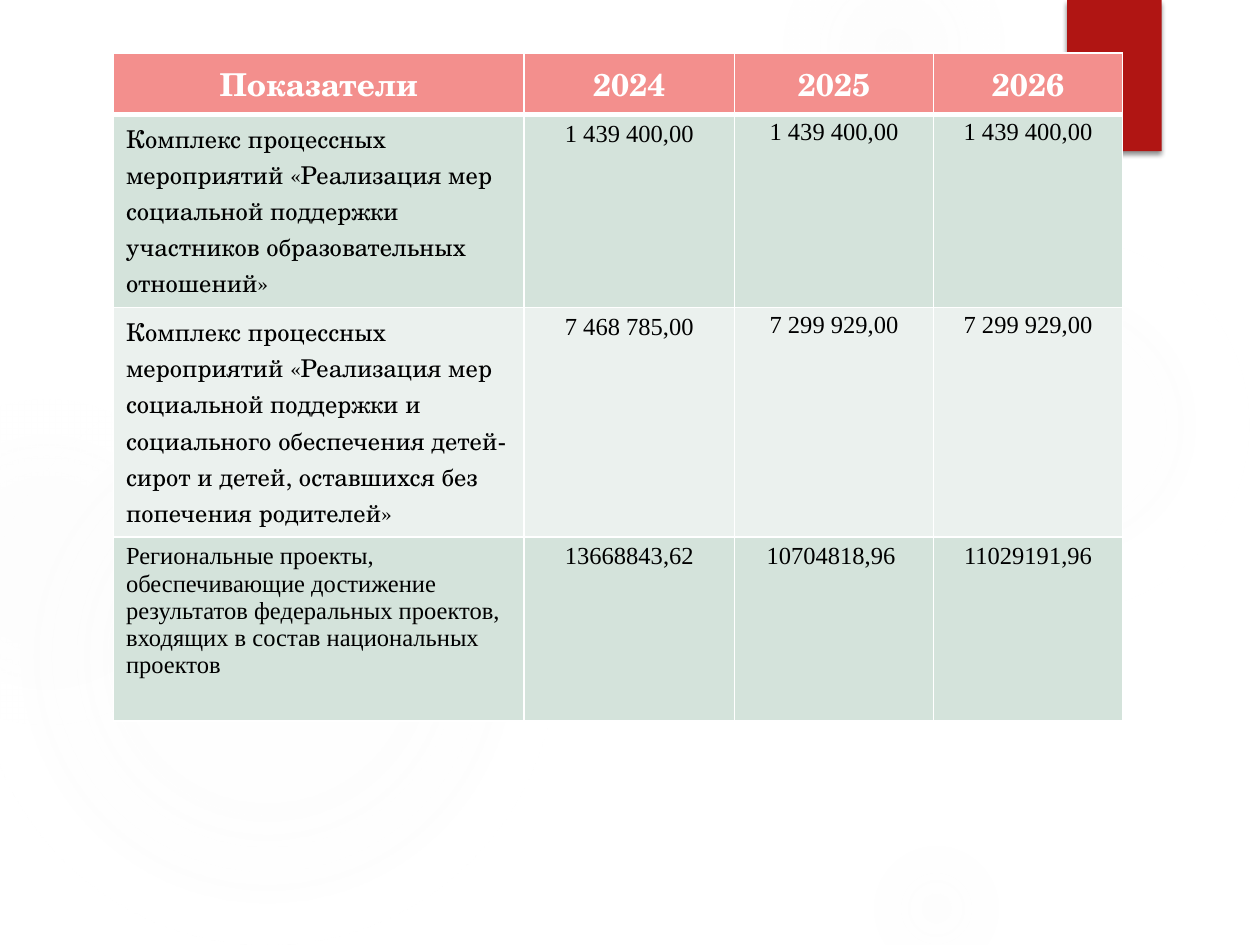
from lxml.etree import SubElement
from pptx import Presentation
from pptx.dml.color import RGBColor
from pptx.enum.shapes import MSO_SHAPE
from pptx.enum.text import PP_ALIGN
from pptx.oxml import parse_xml
from pptx.oxml.ns import nsdecls, qn
from pptx.util import Inches, Pt

COLS, ROWS = 100, 75
SCHOLA, TIMES = "TeX Gyre Schola", "Times New Roman"
WHITE, BLACK, RED, PINK = "FFFFFF", "000000", "B01513", "F38F8D"
BANDS = ["D4E3DB", "EBF1EE"]
GLOW = "F3F3F3"

prs = Presentation()
prs.slide_width, prs.slide_height = Inches(10), Inches(7.5)
UNIT = prs.slide_width / COLS


def grid(*lengths):
    return [round(n * UNIT) for n in lengths]


def color(value):
    return RGBColor.from_string(value)


def write(cell, text, size=14, font=TIMES, fill=BLACK, bold=False,
          align=PP_ALIGN.CENTER, spacing=None):
    p = cell.text_frame.paragraphs[0]
    p.alignment = align
    if spacing:
        p.line_spacing = spacing
    r = p.add_run()
    r.text = text
    r.font.size, r.font.name, r.font.bold = Pt(size), font, bold
    r.font.color.rgb = color(fill)


def add_plain(s, kind, box):
    sp = s.shapes.add_shape(kind, *grid(*box))
    sp.shadow.inherit = False
    sp.line.fill.background()
    return sp


def add_glow(s, box, inner, middle, edge):
    sp = add_plain(s, MSO_SHAPE.OVAL, box)
    stops = "".join(
        f'<a:gs pos="{pos * 1000}"><a:srgbClr val="{GLOW}">'
        f'<a:alpha val="{alpha * 1000}"/></a:srgbClr></a:gs>'
        for pos, alpha in [(0, inner), (36, middle), (edge, 0)])
    sp._element.spPr.find(qn("a:prstGeom")).addnext(parse_xml(
        f'<a:gradFill {nsdecls("a")} rotWithShape="1"><a:gsLst>{stops}</a:gsLst>'
        '<a:path path="circle"><a:fillToRect l="50000" t="50000" r="50000" b="50000"/>'
        '</a:path></a:gradFill>'))


def add_backdrop(s):
    for left, top, size, inner, middle, edge in [
            (68.9, 18.3, 30.8, 7, 6, 69),
            (62.2, -5, 17.5, 14, 7, 73),
            (68.9, 66.7, 10.8, 9, 5, 66),
            (-1.7, 29.2, 45.8, 11, 10, 75),
            (-9.2, 31.7, 25.8, 8, 8, 72)]:
        add_glow(s, (left, top, size, size), inner, middle, edge)


def add_ribbon(s, box):
    sp = add_plain(s, MSO_SHAPE.RECTANGLE, box)
    sp.fill.solid()
    sp.fill.fore_color.rgb = color(RED)
    effects = sp._element.spPr.find(qn("a:effectLst"))
    shadow = SubElement(effects, qn("a:outerShdw"), blurRad=str(Pt(3)),
                        dist=str(Pt(2)), dir="5400000", rotWithShape="0")
    tint = SubElement(shadow, qn("a:srgbClr"), val=BLACK)
    SubElement(tint, qn("a:alpha"), val="45000")


def style_cell(cell, fill, top=1, bottom=1):
    tcPr = cell._tc.get_or_add_tcPr()
    for side, width in [("L", 1), ("R", 1), ("T", top), ("B", bottom)]:
        ln = SubElement(tcPr, qn(f"a:ln{side}"), w=str(Pt(width)))
        SubElement(SubElement(ln, qn("a:solidFill")), qn("a:srgbClr"), val=WHITE)
    cell.fill.solid()
    cell.fill.fore_color.rgb = color(fill)


def add_budget(s, box, widths, heights, header, records):
    table = s.shapes.add_table(len(heights), len(widths), *grid(*box)).table
    for column, width in zip(table.columns, grid(*widths)):
        column.width = width
    for row, height in zip(table.rows, grid(*heights)):
        row.height = height
    for c, text in enumerate(header):
        cell = table.cell(0, c)
        style_cell(cell, PINK, bottom=3)
        write(cell, text, size=18, font=SCHOLA, fill=WHITE, bold=True)
    for r, (font, tight, *texts) in enumerate(records, 1):
        for c, text in enumerate(texts):
            cell = table.cell(r, c)
            style_cell(cell, BANDS[(r - 1) % 2], top=3 if r == 1 else 1)
            if c == 0:
                write(cell, text, font=font, align=PP_ALIGN.LEFT)
            elif tight and c > 1:
                cell.margin_left = cell.margin_right = 0
                cell.margin_top = cell.margin_bottom = 0
                write(cell, text, spacing=1.15)
            else:
                write(cell, text)


HEADER = ["Показатели", "2024", "2025", "2026"]
RECORDS = [
    (SCHOLA, True,
     "Комплекс процессных мероприятий «Реализация мер социальной поддержки "
     "участников образовательных отношений»",
     "1 439 400,00", "1 439 400,00", "1 439 400,00"),
    (SCHOLA, True,
     "Комплекс процессных мероприятий «Реализация мер социальной поддержки и "
     "социального обеспечения детей-сирот и детей, оставшихся без попечения родителей»",
     "7 468 785,00", "7 299 929,00", "7 299 929,00"),
    (TIMES, False,
     "Региональные проекты, обеспечивающие достижение результатов федеральных "
     "проектов, входящих в состав национальных проектов",
     "13668843,62", "10704818,96 ", "11029191,96"),
]

s = prs.slides.add_slide(prs.slide_layouts[6])
add_backdrop(s)
add_ribbon(s, (84.7, 0, 7.5, 12))
widths, heights = [32.6, 16.7, 15.8, 15], [4.8, 15.3, 18.2, 14.6]
add_budget(s, (9, 4.2, sum(widths), sum(heights)), widths, heights, HEADER, RECORDS)
prs.save("out.pptx")
